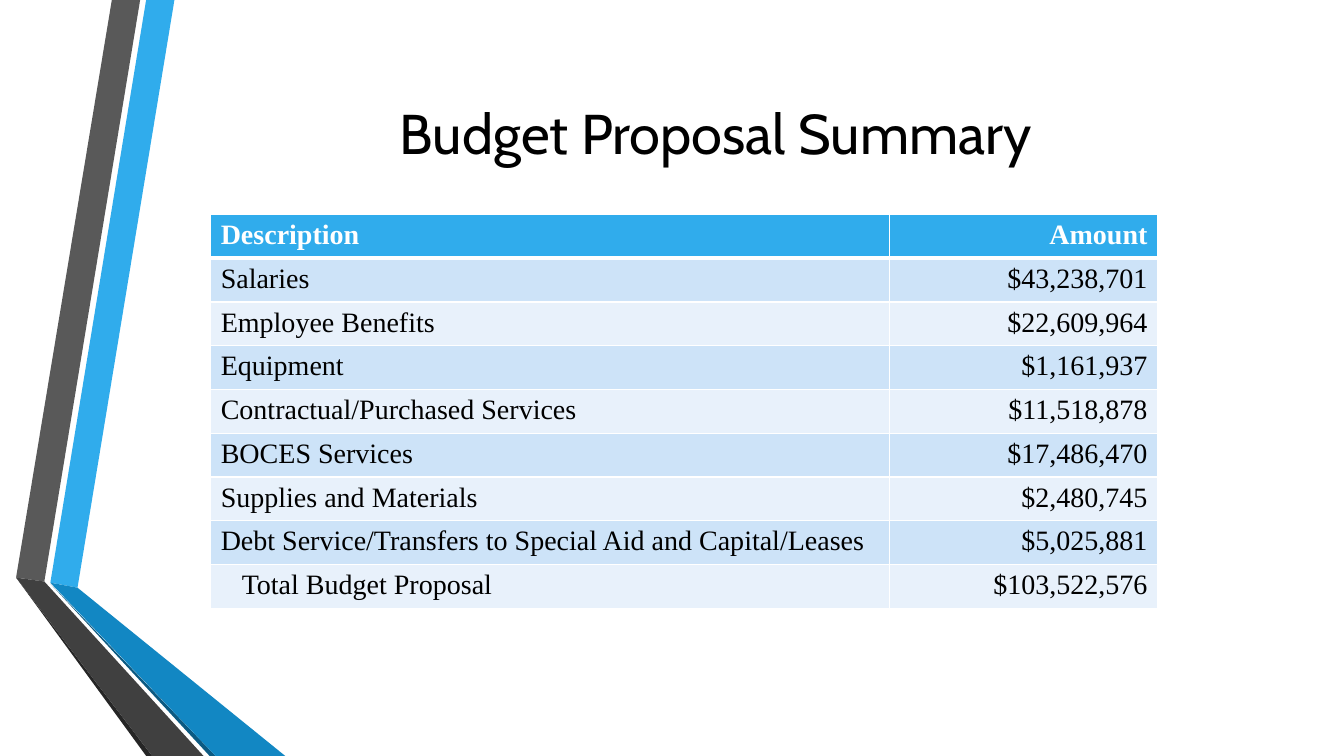
from dataclasses import dataclass

from lxml import etree
from pptx import Presentation
from pptx.dml.color import RGBColor
from pptx.enum.text import MSO_ANCHOR, PP_ALIGN
from pptx.oxml.ns import qn
from pptx.util import Pt

LEFT, CENTER, RIGHT = PP_ALIGN.LEFT, PP_ALIGN.CENTER, PP_ALIGN.RIGHT
MIDDLE = MSO_ANCHOR.MIDDLE

COLORS = {
    "white": "FFFFFF",
    "black": "000000",
    "blue": "30ACEC",
    "deep_blue": "1287C3",
    "navy": "0C5A82",
    "gray": "595959",
    "dark_gray": "404040",
    "charcoal": "262626",
    "odd_row": "CDE3F8",
    "even_row": "E8F1FB",
}


@dataclass(frozen=True)
class Ribbon:
    color: str
    corners: tuple[tuple[float, float], ...]


@dataclass(frozen=True)
class BudgetLine:
    description: str
    amount: str
    indent: float = 0


RIBBONS = (
    Ribbon("blue", ((36, 416.2), (55.4, 419.8), (124.6, 0), (104.4, 0))),
    Ribbon("gray", ((100.1, 0), (79.9, 0), (11.5, 412.6), (31.7, 415.4))),
    Ribbon("charcoal", ((11.5, 412.6), (104.4, 540), (108.7, 540))),
    Ribbon("navy", ((36, 416.9), (149.8, 540), (154.1, 540))),
    Ribbon("deep_blue", ((36, 416.2), (154.1, 540), (203.8, 540), (55.4, 419.8))),
    Ribbon("dark_gray", ((145.4, 540), (31.7, 415.4), (11.5, 412.6), (108.7, 540))),
)

BUDGET = (
    BudgetLine("Description", "Amount"),
    BudgetLine("Salaries", "$43,238,701"),
    BudgetLine("Employee Benefits", "$22,609,964"),
    BudgetLine("Equipment", "$1,161,937"),
    BudgetLine("Contractual/Purchased Services", "$11,518,878"),
    BudgetLine("BOCES Services", "$17,486,470"),
    BudgetLine("Supplies and Materials", "$2,480,745"),
    BudgetLine("Debt Service/Transfers to Special Aid and Capital/Leases", "$5,025,881"),
    BudgetLine("Total Budget Proposal", "$103,522,576", indent=15),
)

COLUMN_WIDTHS = (484.9, 191.5)
ROW_HEIGHT = 29.35


def rgb(color: str) -> RGBColor:
    return RGBColor.from_string(COLORS[color])


def write(frame, text: str, *, font: str, size: float, color: str = "black",
          bold: bool = False, align=LEFT, indent: float = 0) -> None:
    paragraph = frame.paragraphs[0]
    paragraph.alignment = align
    if indent:
        paragraph._p.get_or_add_pPr().set("marL", str(Pt(indent)))
    run = paragraph.add_run()
    run.text = text
    run.font.name = font
    run.font.size = Pt(size)
    run.font.bold = bold
    run.font.color.rgb = rgb(color)


def draw_ribbon(slide, ribbon: Ribbon) -> None:
    corners = [(Pt(x), Pt(y)) for x, y in ribbon.corners]
    builder = slide.shapes.build_freeform(*corners[0], scale=1.0)
    builder.add_line_segments(corners[1:], close=True)
    band = builder.convert_to_shape()
    band.shadow.inherit = False
    band.fill.solid()
    band.fill.fore_color.rgb = rgb(ribbon.color)
    band.line.fill.background()


def draw_title(slide) -> None:
    title = slide.shapes.add_textbox(Pt(116.6), Pt(54), Pt(789.1), Pt(81.4))
    title.text_frame.word_wrap = True
    title.text_frame.vertical_anchor = MIDDLE
    write(title.text_frame, "Budget Proposal Summary", font="Cabin", size=40, align=CENTER)


def set_borders(cell, top: float, bottom: float) -> None:
    properties = cell._tc.get_or_add_tcPr()
    sides = {"a:lnL": 1, "a:lnR": 1, "a:lnT": top, "a:lnB": bottom}
    for position, (side, width) in enumerate(sides.items()):
        border = etree.Element(qn(side), w=str(Pt(width)))
        fill = etree.SubElement(border, qn("a:solidFill"))
        etree.SubElement(fill, qn("a:srgbClr"), val=COLORS["white"])
        properties.insert(position, border)


def draw_budget(slide) -> None:
    budget = slide.shapes.add_table(
        len(BUDGET), len(COLUMN_WIDTHS), Pt(150.5), Pt(153.3),
        Pt(sum(COLUMN_WIDTHS)), Pt(ROW_HEIGHT * len(BUDGET))).table
    for column, width in zip(budget.columns, COLUMN_WIDTHS):
        column.width = Pt(width)
    for index, (row, line) in enumerate(zip(budget.rows, BUDGET)):
        row.height = Pt(ROW_HEIGHT)
        header = index == 0
        background = "blue" if header else "odd_row" if index % 2 else "even_row"
        description, amount = row.cells
        for cell, text, align, indent in (
            (description, line.description, LEFT, line.indent),
            (amount, line.amount, RIGHT, 0),
        ):
            cell.fill.solid()
            cell.fill.fore_color.rgb = rgb(background)
            set_borders(cell, top=3 if index == 1 else 1, bottom=3 if header else 1)
            write(cell.text_frame, text, font="Times New Roman", size=20,
                  color="white" if header else "black", bold=header,
                  align=align, indent=indent)


def main() -> None:
    presentation = Presentation()
    presentation.slide_width = Pt(960)
    presentation.slide_height = Pt(540)
    slide = presentation.slides.add_slide(presentation.slide_layouts[6])
    for ribbon in RIBBONS:
        draw_ribbon(slide, ribbon)
    draw_title(slide)
    draw_budget(slide)
    presentation.save("out.pptx")


if __name__ == "__main__":
    main()
